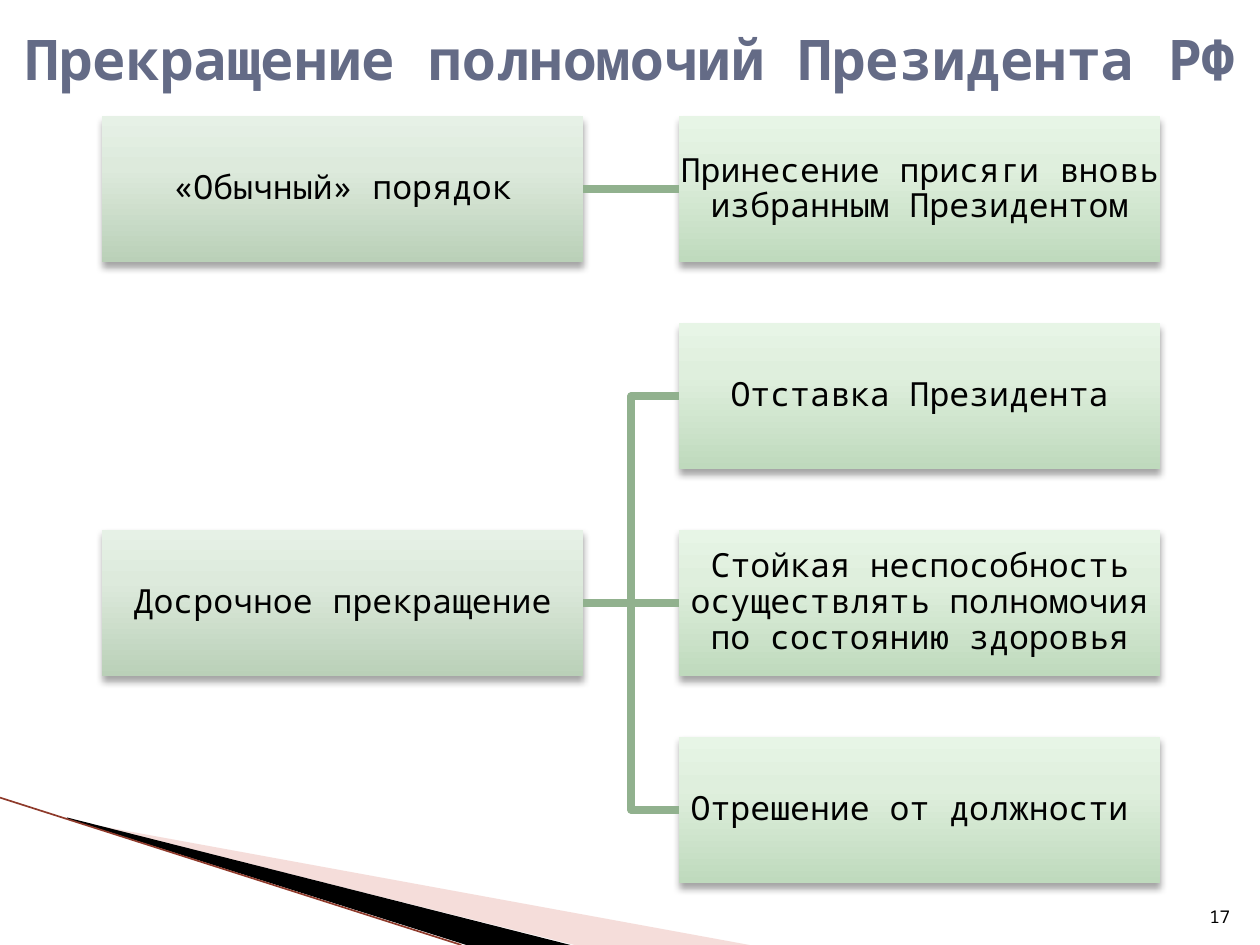
from copy import deepcopy
from dataclasses import dataclass

from lxml import etree
from pptx import Presentation
from pptx.dml.color import RGBColor
from pptx.enum.shapes import MSO_CONNECTOR, MSO_SHAPE
from pptx.enum.text import MSO_ANCHOR, MSO_AUTO_SIZE, PP_ALIGN
from pptx.oxml.ns import qn
from pptx.util import Cm, Pt

STRAIGHT, ELBOW = MSO_CONNECTOR.STRAIGHT, MSO_CONNECTOR.ELBOW
RECTANGLE = MSO_SHAPE.RECTANGLE
MIDDLE, BOTTOM = MSO_ANCHOR.MIDDLE, MSO_ANCHOR.BOTTOM
CENTER, RIGHT = PP_ALIGN.CENTER, PP_ALIGN.RIGHT
NO_AUTOFIT = MSO_AUTO_SIZE.NONE
RIGHT_SIDE, LEFT_SIDE = 3, 1
TITLE_ONLY_LAYOUT = 5


@dataclass(frozen=True)
class Theme:
    font: str = "Noto Sans Mono"
    title_size: float = 32
    box_size: float = 19
    number_size: float = 10
    title: str = "646B86"
    text: str = "000000"
    branch: str = "91B18E"
    branch_width: float = 4.33
    wedge_pale: str = "E7ACA4"
    wedge_dark: str = "000000"
    edge: str = "8E3A2B"
    edge_width: float = 0.95
    # Gradient stops, from the bottom of a box to its top
    order_box: tuple = ((0, "BAD0B8"), (0.65, "DDEADC"), (1, "E6F1E6"))
    reason_box: tuple = ((0, "BFDABD"), (0.65, "DFEFDD"), (1, "E7F5E6"))


class SlideBuilder:
    """Holds the theme and the current slide; all lengths are in centimetres."""

    def __init__(self, slide, theme):
        self.slide = slide
        self.theme = theme

    def set_text(self, shape, text, size, color, anchor, align, margin=None, bold=False,
                 spacing=1.0):
        frame = shape.text_frame
        frame_format = {"word_wrap": True, "auto_size": NO_AUTOFIT, "vertical_anchor": anchor}
        if margin is not None:
            for side in ("left", "right", "top", "bottom"):
                frame_format[f"margin_{side}"] = Cm(margin)
        frame.text = text
        paragraph = frame.paragraphs[0]
        font = paragraph.runs[0].font
        font_format = {"name": self.theme.font, "size": Pt(size), "bold": bold}
        paragraph_format = {"alignment": align, "line_spacing": spacing}
        for target, values in ((frame, frame_format), (paragraph, paragraph_format),
                               (font, font_format)):
            for key, value in values.items():
                setattr(target, key, value)
        font.color.rgb = RGBColor.from_string(color)

    def title(self, text, left, top, width, height):
        title = self.slide.shapes.title
        place = {"left": left, "top": top, "width": width, "height": height}
        for key, value in place.items():
            setattr(title, key, Cm(value))
        self.set_text(title, text, self.theme.title_size, self.theme.title, MIDDLE, CENTER,
                      bold=True)

    def page_number(self, text, left, top, width, height):
        number = self.slide.shapes.add_textbox(Cm(left), Cm(top), Cm(width), Cm(height))
        self.set_text(number, text, self.theme.number_size, self.theme.text, BOTTOM, RIGHT)

    def wedge(self, points, color, opacity=100):
        corners = [(Cm(x), Cm(y)) for x, y in points]
        builder = self.slide.shapes.build_freeform(*corners[0])
        builder.add_line_segments(corners[1:], close=True)
        wedge = builder.convert_to_shape()
        wedge.shadow.inherit = False
        wedge.line.fill.background()
        wedge.fill.solid()
        wedge.fill.fore_color.rgb = RGBColor.from_string(color)
        if opacity < 100:
            tint = wedge._element.spPr.find(".//" + qn("a:srgbClr"))
            etree.SubElement(tint, qn("a:alpha"), val=str(opacity * 1000))

    def line(self, kind, start, end, color, width):
        line = self.slide.shapes.add_connector(kind, *(Cm(v) for v in (*start, *end)))
        line.line.color.rgb = RGBColor.from_string(color)
        line.line.width = Pt(width)
        etree.SubElement(line._element.spPr, qn("a:effectLst"))
        return line

    def branch(self, order, reason):
        kind = STRAIGHT if order.top == reason.top else ELBOW
        start = ((order.left + order.width) / Cm(1), (order.top + order.height / 2) / Cm(1))
        end = (reason.left / Cm(1), (reason.top + reason.height / 2) / Cm(1))
        branch = self.line(kind, start, end, self.theme.branch, self.theme.branch_width)
        branch.begin_connect(order, RIGHT_SIDE)
        branch.end_connect(reason, LEFT_SIDE)

    def box(self, text, left, top, width, height, stops):
        box = self.slide.shapes.add_shape(RECTANGLE, Cm(left), Cm(top), Cm(width), Cm(height))
        box.line.fill.background()
        # Three-stop vertical gradient
        box.fill.gradient()
        box.fill.gradient_angle = 90
        stop_list = box._element.spPr.find(".//" + qn("a:gsLst"))
        stop_list.append(deepcopy(stop_list[-1]))
        for stop, (position, color) in zip(box.fill.gradient_stops, stops):
            stop.position = position
            stop.color.rgb = RGBColor.from_string(color)
        # Soft shadow straight below
        box.shadow.inherit = False
        effects = box._element.spPr.find(qn("a:effectLst"))
        shadow = etree.SubElement(effects, qn("a:outerShdw"), blurRad=str(Pt(4)),
                                  dist=str(Pt(3)), dir="5400000", rotWithShape="0")
        shade = etree.SubElement(shadow, qn("a:srgbClr"), val="000000")
        etree.SubElement(shade, qn("a:alpha"), val="35000")
        self.set_text(box, text, self.theme.box_size, self.theme.text, MIDDLE, CENTER,
                      margin=0, spacing=0.9)
        return box


# Box grid
BOX_WIDTH, BOX_HEIGHT = 9.7, 2.95
ORDER_LEFT, REASON_LEFT = 2.06, 13.69
FIRST_TOP, ROW_STEP = 2.34, 4.17

# Each order: its row, its text, and its reasons as (row, text)
ORDERS = [
    (0, "«Обычный» порядок", [(0, "Принесение присяги вновь избранным Президентом")]),
    (2, "Досрочное прекращение", [
        (1, "Отставка Президента"),
        (2, "Стойкая неспособность осуществлять полномочия по состоянию здоровья"),
        (3, "Отрешение от должности "),
    ]),
]


def main():
    theme = Theme()
    deck = Presentation()
    deck.slide_width, deck.slide_height = Cm(25.4), Cm(19.05)
    page = SlideBuilder(deck.slides.add_slide(deck.slide_layouts[TITLE_ONLY_LAYOUT]), theme)

    # Corner decoration
    page.wedge([(1.4, 16.54), (15.11, 19.05), (11.58, 19.05), (1.4, 16.51)], theme.wedge_pale, 40)
    page.wedge([(1.35, 16.48), (11.5, 19.05), (9.4, 19.05), (1.37, 16.51)], theme.wedge_dark)
    page.line(STRAIGHT, (0, 16.08), (9.3, 19.05), theme.edge, theme.edge_width)

    # Orders joined to their reasons
    def place(row, text, left, stops):
        return page.box(text, left, FIRST_TOP + row * ROW_STEP, BOX_WIDTH, BOX_HEIGHT, stops)

    for order_row, order_text, reasons in ORDERS:
        order = place(order_row, order_text, ORDER_LEFT, theme.order_box)
        for reason_row, reason_text in reasons:
            reason = place(reason_row, reason_text, REASON_LEFT, theme.reason_box)
            page.branch(order, reason)

    # Title and page number
    page.title("Прекращение полномочий Президента РФ", 0.05, 0, 25.35, 2.34)
    page.page_number("17", 24.03, 17.8, 1.02, 1.02)

    deck.save("out.pptx")


if __name__ == "__main__":
    main()
